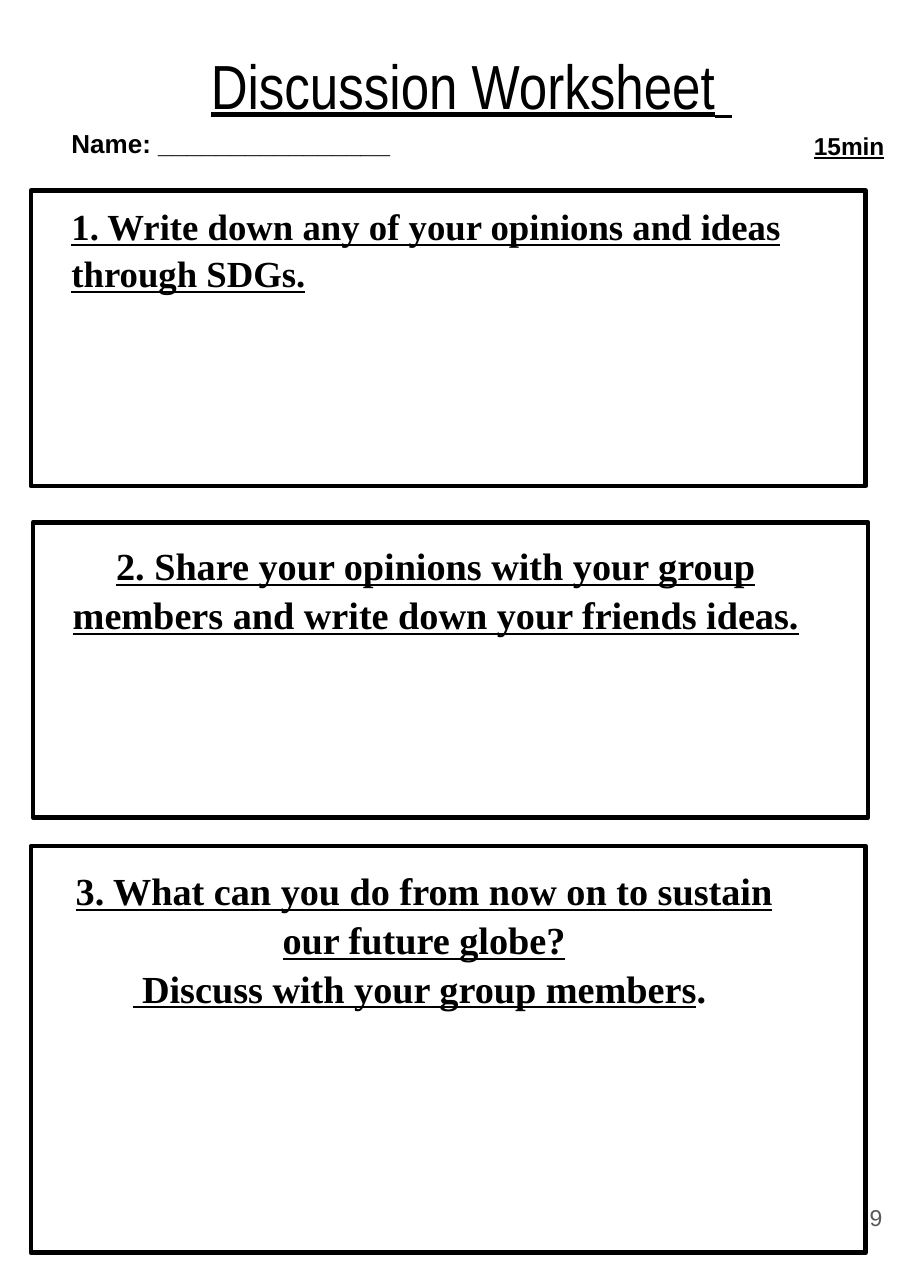
from pptx import Presentation
from pptx.dml.color import RGBColor
from pptx.enum.shapes import MSO_SHAPE
from pptx.enum.text import MSO_ANCHOR as Anchor, PP_ALIGN as Align
from pptx.util import Inches, Pt

COLORS = {"ink": "000000", "page": "595959"}
SERIF, SANS, NARROW = "Times New Roman", "Arial", "Arial Narrow"

HEADING = [[("Discussion Worksheet", {}), (" ", {"font": SANS})]]
NAME_LINE = [[("Name: ________________", {})]]
TIME_LIMIT = [[("15min", {})]]
PAGE_NUMBER = [[("9", {})]]

TASKS = [
    {"frame": (0.28, 1.73, 7.58, 2.68), "box": (0.55, 1.73, 7.45, 1.01),
     "size": 24, "align": Align.LEFT,
     "lines": [[("1. Write down any of your opinions and ideas through SDGs.", {})]]},
    {"frame": (0.3, 4.74, 7.58, 2.68), "box": (0.23, 4.8, 7.45, 1.04),
     "size": 25, "align": Align.CENTER,
     "lines": [[("2. Share your opinions with your group members "
                 "and write down your friends ideas.", {})]]},
    {"frame": (0.28, 7.68, 7.58, 3.69), "box": (0.55, 7.75, 6.6, 1.46),
     "size": 25, "align": Align.CENTER,
     "lines": [[("3. What can you do from now on to sustain our future globe?", {})],
               [(" Discuss with your group members", {}), (". ", {"underline": False})]]},
]


def place(shape, box):
    shape.left, shape.top, shape.width, shape.height = map(Inches, box)


def write(shape, lines, size, font=SANS, color="ink", bold=False, underline=False,
          align=Align.LEFT, anchor=Anchor.TOP, inset=0.1, spacing=1.06, wrap=True):
    frame = shape.text_frame
    frame.word_wrap = wrap
    frame.vertical_anchor = anchor
    frame.margin_left = frame.margin_right = Inches(inset)
    frame.margin_top = frame.margin_bottom = Inches(inset)
    for number, line in enumerate(lines):
        paragraph = frame.add_paragraph() if number else frame.paragraphs[0]
        paragraph.alignment = align
        paragraph.line_spacing = spacing
        for words, changes in line:
            run = paragraph.add_run()
            run.text = words
            run.font.size = Pt(size)
            run.font.name = changes.get("font", font)
            run.font.bold = bold
            run.font.underline = changes.get("underline", underline)
            run.font.color.rgb = RGBColor.from_string(COLORS[color])


def add_text(slide, box, lines, **style):
    write(slide.shapes.add_textbox(*map(Inches, box)), lines, **style)


def add_frame(slide, box):
    frame = slide.shapes.add_shape(MSO_SHAPE.RECTANGLE, *map(Inches, box))
    frame.shadow.inherit = False
    frame.fill.background()
    frame.line.color.rgb = RGBColor.from_string(COLORS["ink"])
    frame.line.width = Pt(3)


def main():
    deck = Presentation()
    deck.slide_width, deck.slide_height = Inches(8.27), Inches(11.69)
    slide = deck.slides.add_slide(deck.slide_layouts[5])

    title = slide.shapes.title
    place(title, (0.43, 0.2, 7.7, 0.91))
    write(title, HEADING, size=40.7, font=NARROW, underline=True,
          align=Align.CENTER, inset=0.15, spacing=1.12)

    for task in TASKS:
        add_frame(slide, task["frame"])
        add_text(slide, task["box"], task["lines"], size=task["size"], font=SERIF,
                 bold=True, underline=True, align=task["align"])

    add_text(slide, (0.55, 1.04, 3.45, 0.49), NAME_LINE, size=17, bold=True)
    add_text(slide, (7.29, 1.07, 0.84, 0.47), TIME_LIMIT, size=16, bold=True,
             underline=True, wrap=False)
    add_text(slide, (7.66, 10.6, 0.5, 0.89), PAGE_NUMBER, size=15, color="page",
             align=Align.RIGHT, anchor=Anchor.MIDDLE, inset=0.15, spacing=1)
    deck.save("out.pptx")


if __name__ == "__main__":
    main()
